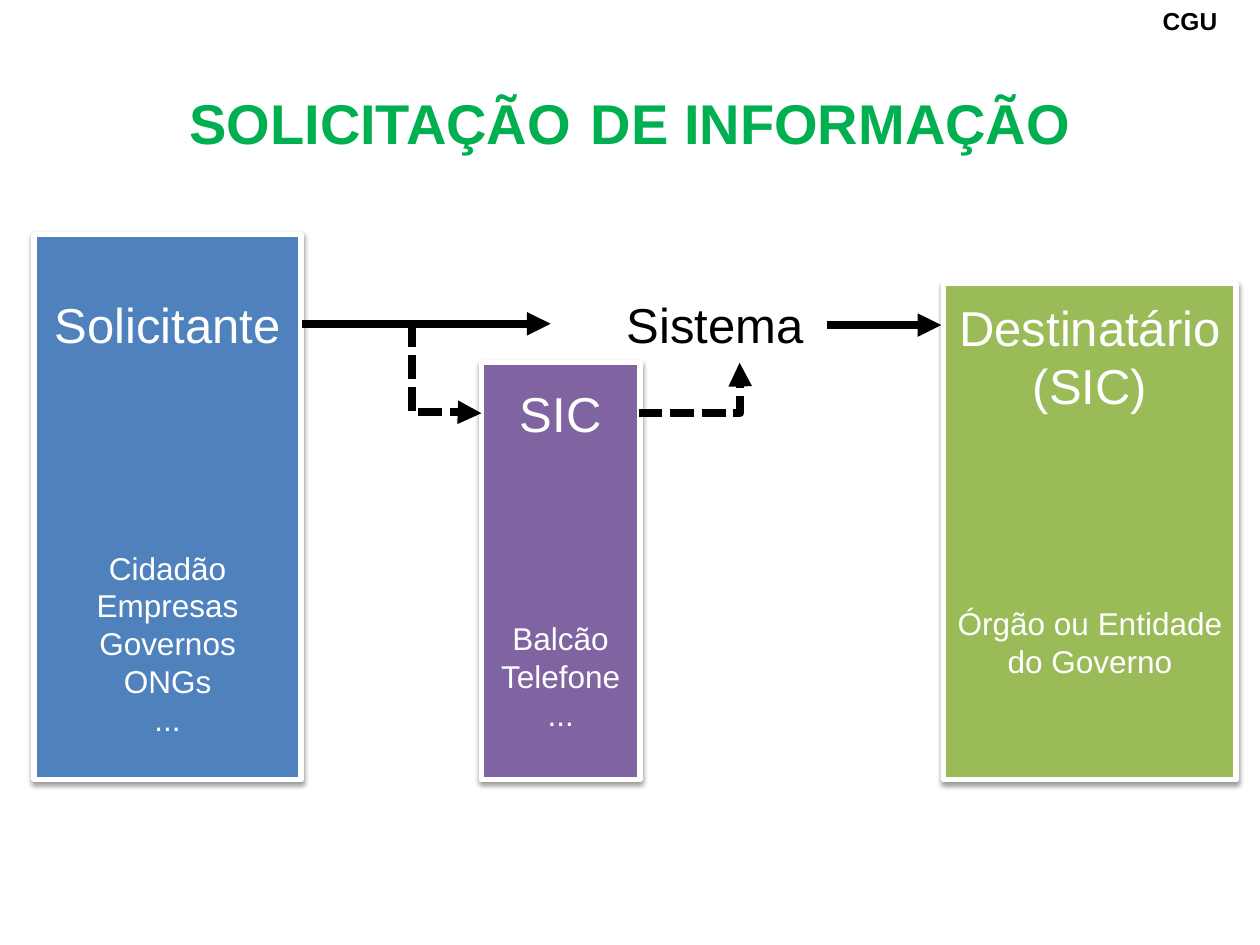
from dataclasses import dataclass

from lxml import etree
from pptx import Presentation
from pptx.dml.color import RGBColor
from pptx.enum.dml import MSO_LINE
from pptx.enum.shapes import MSO_CONNECTOR, MSO_SHAPE
from pptx.enum.text import MSO_ANCHOR, PP_ALIGN
from pptx.oxml.ns import qn
from pptx.util import Inches, Pt

RECTANGLE = MSO_SHAPE.RECTANGLE
STRAIGHT, ELBOW = MSO_CONNECTOR.STRAIGHT, MSO_CONNECTOR.ELBOW
SHORT_DASH = MSO_LINE.SQUARE_DOT
MIDDLE, TOP = MSO_ANCHOR.MIDDLE, MSO_ANCHOR.TOP
CENTER, LEFT = PP_ALIGN.CENTER, PP_ALIGN.LEFT


@dataclass(frozen=True)
class Theme:
    font: str = "Arial"
    black: str = "000000"
    white: str = "FFFFFF"
    title_green: str = "00B050"
    gray: str = "808080"
    blue: str = "4F81BD"
    purple: str = "8064A2"
    green: str = "9BBB59"
    title_size: int = 32
    gap_size: int = 40
    heading_size: int = 28
    detail_size: int = 18
    label_size: int = 14


def add_run(paragraph, text, *, font, size, color, bold=False):
    run = paragraph.add_run()
    run.text = text
    run.font.name = font
    run.font.size = Pt(size)
    run.font.bold = bold
    run.font.color.rgb = RGBColor.from_string(color)


class SlideBuilder:
    def __init__(self, slide, theme):
        self.slide = slide
        self.theme = theme

    def title(self, box, runs):
        shape = self.slide.shapes.title
        shape.left, shape.top, shape.width, shape.height = map(Inches, box)
        shape.text_frame.vertical_anchor = MIDDLE
        paragraph = shape.text_frame.paragraphs[0]
        paragraph.alignment = CENTER
        for text, size, color in runs:
            add_run(paragraph, text, font=self.theme.font, size=size, color=color, bold=True)

    def text(self, box, lines, size, color, bold=False, alignment=CENTER, anchor=MIDDLE):
        shape = self.slide.shapes.add_textbox(*map(Inches, box))
        frame = shape.text_frame
        frame.word_wrap = True
        frame.vertical_anchor = anchor
        if alignment == CENTER:
            frame.margin_left = frame.margin_right = Inches(0.05)
        for index, line in enumerate(lines):
            paragraph = frame.add_paragraph() if index else frame.paragraphs[0]
            paragraph.alignment = alignment
            add_run(paragraph, line, font=self.theme.font, size=size, color=color, bold=bold)

    def panel(self, box, fill):
        shape = self.slide.shapes.add_shape(RECTANGLE, *map(Inches, box))
        shape.fill.solid()
        shape.fill.fore_color.rgb = RGBColor.from_string(fill)
        shape.line.color.rgb = RGBColor.from_string(self.theme.white)
        shape.line.width = Pt(3)
        shape.shadow.inherit = False
        effects = shape._element.spPr.find(qn("a:effectLst"))
        shadow = etree.SubElement(
            effects, qn("a:outerShdw"), blurRad=str(Pt(3.1)), dist=str(Pt(1.6)),
            dir="5400000", rotWithShape="0")
        color = etree.SubElement(shadow, qn("a:srgbClr"), val=self.theme.black)
        etree.SubElement(color, qn("a:alpha"), val="38000")

    def arrow(self, start, end, kind=STRAIGHT, dash=None, bend=None, turned=False):
        connector = self.slide.shapes.add_connector(kind, *map(Inches, start + end))
        connector.line.color.rgb = RGBColor.from_string(self.theme.black)
        connector.line.width = Pt(4.5)
        if dash is not None:
            connector.line.dash_style = dash
        properties = connector._element.spPr
        etree.SubElement(properties.find(qn("a:ln")), qn("a:tailEnd"), type="triangle")
        etree.SubElement(properties, qn("a:effectLst"))
        if bend is not None:
            guides = properties.find(qn("a:prstGeom")).find(qn("a:avLst"))
            etree.SubElement(guides, qn("a:gd"), name="adj1", fmla=f"val {bend}")
        if turned:
            transform = properties.find(qn("a:xfrm"))
            transform.set("rot", "16200000")
            transform.set("flipH", "1")


def main():
    theme = Theme()
    presentation = Presentation()
    presentation.slide_width, presentation.slide_height = Inches(10), Inches(7.5)
    slide = presentation.slides.add_slide(presentation.slide_layouts[5])
    builder = SlideBuilder(slide, theme)

    builder.text((9.13, 0, 0.87, 0.34), ["CGU"], theme.label_size, theme.black,
                 bold=True, alignment=LEFT, anchor=TOP)
    builder.title((0.5, 0.3, 9, 1.25), [
        ("SOLICITAÇÃO", theme.title_size, theme.title_green),
        (" ", theme.gap_size, theme.gray),
        ("DE INFORMAÇÃO", theme.title_size, theme.title_green),
    ])

    bottom = 6.19
    columns = [
        (7.49, 2.32, 2.25, theme.green, 2.18, 1.29, ["Destinatário", "(SIC)"],
         4, ["Órgão ou Entidade do Governo"]),
        (3.82, 1.26, 2.88, theme.purple, 2.88, 0.79, ["SIC"],
         4.54, ["Balcão", "Telefone", "..."]),
        (0.27, 2.12, 1.86, theme.blue, 1.86, 1.42, ["Solicitante"],
         4.02, ["Cidadão", "Empresas", "Governos", "ONGs", "..."]),
    ]
    for left, width, top, fill, heading_top, heading_height, heading, detail_top, detail in columns:
        builder.panel((left, top, width, bottom - top), fill)
        builder.text((left, heading_top, width, heading_height), heading,
                     theme.heading_size, theme.white)
        builder.text((left, detail_top, width, bottom - detail_top), detail,
                     theme.detail_size, theme.white)
    builder.text((4.69, 1.86, 1.97, 1.42), ["Sistema"], theme.heading_size, theme.black)

    builder.arrow((2.4, 2.57), (4.37, 2.57))
    builder.arrow((6.56, 2.58), (7.47, 2.58))
    builder.arrow((3.19, 2.65), (3.9, 3.2), ELBOW, SHORT_DASH, bend=99000, turned=True)
    builder.arrow((5.07, 3.28), (5.87, 2.88), ELBOW, SHORT_DASH, bend=100600)

    presentation.save("out.pptx")


if __name__ == "__main__":
    main()
